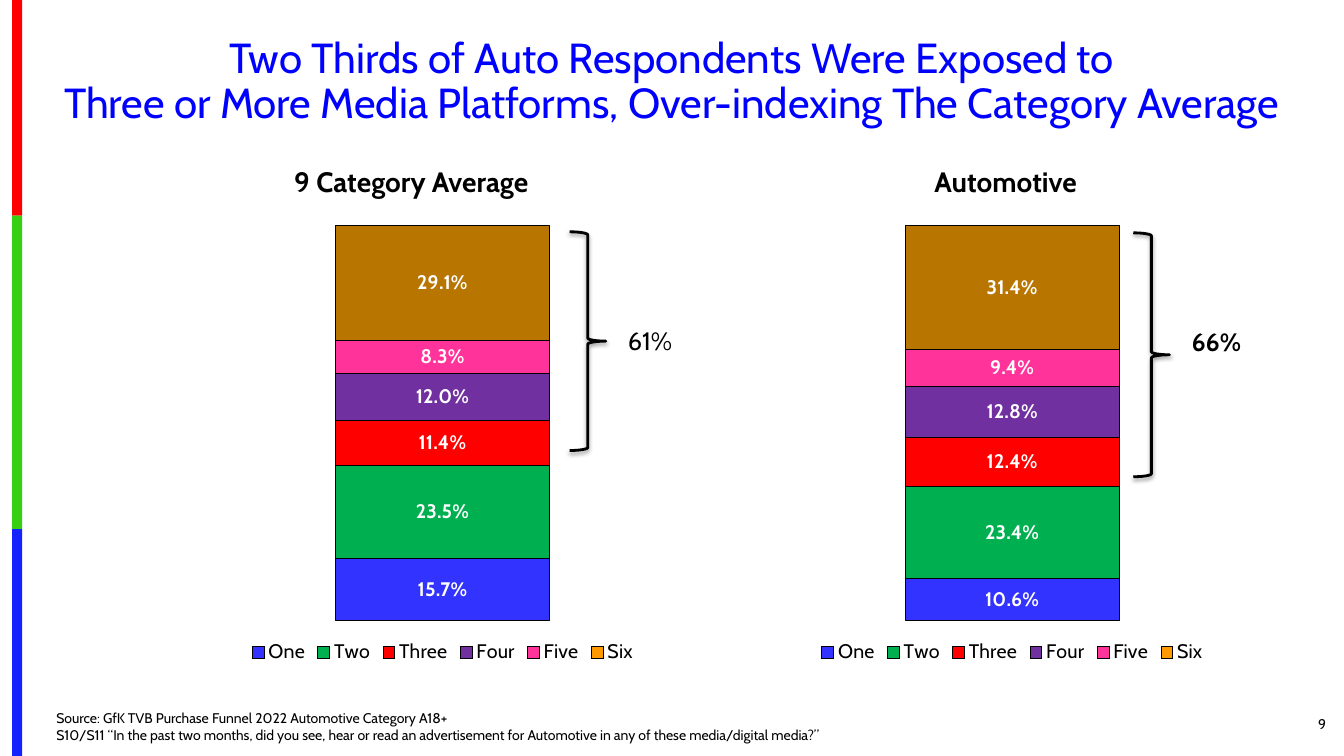
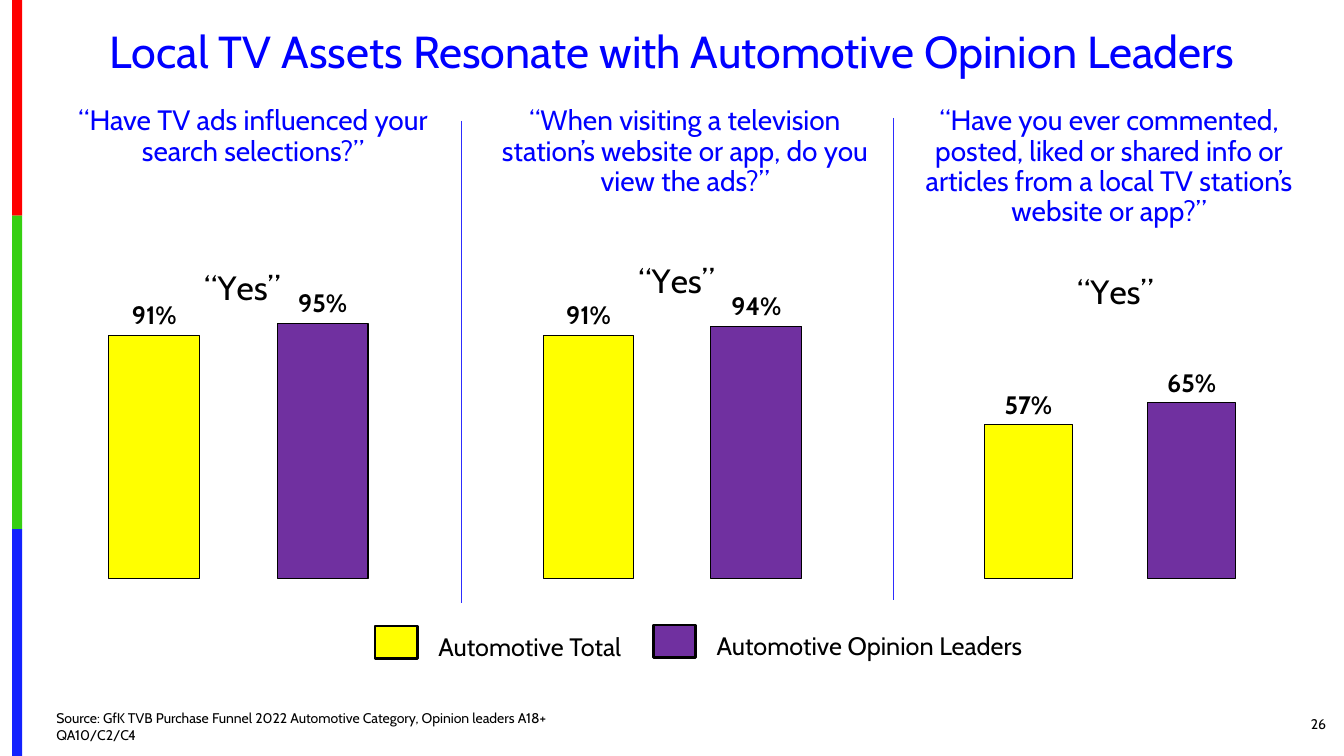
from pptx import Presentation
from pptx.chart.data import CategoryChartData
from pptx.dml.color import RGBColor
from pptx.enum.chart import XL_CHART_TYPE as ChartType, XL_LABEL_POSITION as LabelPosition, XL_LEGEND_POSITION as LegendPosition
from pptx.enum.shapes import MSO_CONNECTOR as Connector, MSO_SHAPE as Shape
from pptx.enum.text import MSO_ANCHOR as Anchor, PP_ALIGN as Align
from pptx.oxml import parse_xml
from pptx.oxml.ns import nsdecls, qn
from pptx.util import Inches, Pt

FONT = "Cabin"
BLACK, WHITE, BLUE = "000000", "FFFFFF", "0000FF"
YELLOW, PURPLE, DIVIDER = "FFFF00", "7030A0", "2D2DFE"
STRIPES = [("FE0000", 0, 2.14), ("36CF12", 2.14, 3.11), ("1322FE", 5.25, 2.25)]
hex_color = RGBColor.from_string


def add_text(slide, box, text, size, color=BLACK, bold=False, align=Align.LEFT, anchor=Anchor.TOP, spacing=1.0):
    frame = slide.shapes.add_textbox(*map(Inches, box)).text_frame
    frame.word_wrap = True
    frame.vertical_anchor = anchor
    paragraph = frame.paragraphs[0]
    paragraph.text = text
    paragraph.alignment = align
    paragraph.line_spacing = spacing
    paragraph.font.name = FONT
    paragraph.font.size = Pt(size)
    paragraph.font.bold = bold
    paragraph.font.color.rgb = hex_color(color)


def add_bar_chart(slide, kind, box, categories, series_rows, plot_box, gap, label_style, minimum):
    data = CategoryChartData()
    data.categories = categories
    for name, values, color, point_colors in series_rows:
        data.add_series(name, values)
    chart = slide.shapes.add_chart(kind, *map(Inches, box), data).chart
    chart.font.name = FONT
    chart.font.size = Pt(10)
    chart.font.color.rgb = hex_color(BLACK)
    chart.has_legend = False
    chart.has_title = False
    chart.category_axis.visible = False
    chart.value_axis.visible = False
    chart.value_axis.has_major_gridlines = False
    chart.value_axis.minimum_scale = minimum
    chart.value_axis.maximum_scale = 1
    plot = chart.plots[0]
    plot.gap_width = gap
    plot.vary_by_categories = False
    number_format, size, label_color, position = label_style
    for series, (name, values, color, point_colors) in zip(plot.series, series_rows):
        series.invert_if_negative = False
        targets = [(series.format, color)]
        targets += [(series.points[i].format, c) for i, c in enumerate(point_colors)]
        for target, fill in targets:
            target.fill.solid()
            target.fill.fore_color.rgb = hex_color(fill)
            target.line.color.rgb = hex_color(BLACK)
            target.line.width = Pt(0.75)
        labels = series.data_labels
        labels.show_value = True
        labels.number_format = number_format
        labels.number_format_is_linked = False
        labels.position = position
        labels.font.name = FONT
        labels.font.size = Pt(size)
        labels.font.bold = True
        labels.font.color.rgb = hex_color(label_color)
    plot_area = chart._chartSpace.chart.plotArea
    for layout in plot_area.findall(qn("c:layout")):
        plot_area.remove(layout)
    x, y, width, height = plot_box
    plot_area.insert(0, parse_xml(
        f'<c:layout {nsdecls("c")}><c:manualLayout><c:layoutTarget val="inner"/>'
        f'<c:xMode val="edge"/><c:yMode val="edge"/><c:x val="{x}"/><c:y val="{y}"/>'
        f'<c:w val="{width}"/><c:h val="{height}"/></c:manualLayout></c:layout>'))
    return chart


presentation = Presentation()
presentation.slide_width = Inches(13.33)
presentation.slide_height = Inches(7.5)

frames = [
    ("Two Thirds of Auto Respondents Were Exposed to\nThree or More Media Platforms, Over-indexing The Category Average",
     (0, 0.32, 13.33, 1.46), 30, "9",
     "Source: GfK TVB Purchase Funnel 2022 Automotive Category A18+\n"
     "S10/S11 “In the past two months, did you see, hear or read an advertisement for Automotive in any of these media/digital media?”"),
    ("Local TV Assets Resonate with Automotive Opinion Leaders",
     (0.46, 0.25, 12.42, 0.59), 32, "26",
     "Source: GfK TVB Purchase Funnel 2022 Automotive Category, Opinion leaders A18+\nQA10/C2/C4"),
]
slides = []
for title, title_box, title_size, number, source in frames:
    slide = presentation.slides.add_slide(presentation.slide_layouts[6])
    for color, top, height in STRIPES:
        stripe = slide.shapes.add_shape(Shape.RECTANGLE, Inches(0.12), Inches(top), Inches(0.1), Inches(height))
        stripe.shadow.inherit = False
        stripe.fill.solid()
        stripe.fill.fore_color.rgb = hex_color(color)
        stripe.line.fill.background()
    add_text(slide, title_box, title, title_size, BLUE, align=Align.CENTER, spacing=0.9)
    add_text(slide, (12.17, 6.98, 1.08, 0.4), number, 10, align=Align.RIGHT, anchor=Anchor.MIDDLE)
    add_text(slide, (0.46, 6.98, 9.45, 0.44), source, 10, anchor=Anchor.BOTTOM)
    slides.append(slide)
platforms_slide, leaders_slide = slides

platforms = [("One", "3333FF", []), ("Two", "00B050", []), ("Three", "FF0000", []),
             ("Four", PURPLE, []), ("Five", "FF3399", []), ("Six", "FF9900", ["B87600"])]
groups = [
    ("9 Category Average", (2.82, 1.58, 2.97, 0.44), 1.63, [0.157, 0.235, 0.114, 0.12, 0.083, 0.291],
     (5.65, 2.3, 0.36, 2.17), "61%", (6.13, 3.18, 0.9, 0.4), False),
    ("Automotive", (9.17, 1.58, 1.83, 0.44), 7.28, [0.106, 0.234, 0.124, 0.128, 0.094, 0.314],
     (11.24, 2.31, 0.36, 2.42), "66%", (11.72, 3.19, 0.9, 0.4), True),
]
for heading, heading_box, left, shares, brace_box, total, total_box, total_bold in groups:
    rows = [(name, [share], color, points) for (name, color, points), share in zip(platforms, shares)]
    chart = add_bar_chart(platforms_slide, ChartType.COLUMN_STACKED, (left, 1.34, 5.52, 5.29), ["1"], rows,
                          (0.02, 0.17, 0.96, 0.74), 150, ("0.0%", 14, WHITE, LabelPosition.CENTER), 0)
    chart.plots[0].overlap = 100
    chart.has_legend = True
    chart.legend.position = LegendPosition.BOTTOM
    chart.legend.include_in_layout = False
    chart.legend.font.name = FONT
    chart.legend.font.size = Pt(14)
    chart.legend.font.color.rgb = hex_color(BLACK)
    add_text(platforms_slide, heading_box, heading, 20, bold=True)
    brace = platforms_slide.shapes.add_shape(Shape.RIGHT_BRACE, *map(Inches, brace_box))
    brace.fill.background()
    brace.line.color.rgb = hex_color(BLACK)
    brace.line.width = Pt(2)
    brace._element.spPr.append(parse_xml(
        f'<a:effectLst {nsdecls("a")}><a:outerShdw blurRad="{Pt(3.1)}" dist="{Pt(1.6)}" dir="5400000" rotWithShape="0">'
        f'<a:srgbClr val="{BLACK}"><a:alpha val="38000"/></a:srgbClr></a:outerShdw></a:effectLst>'))
    add_text(platforms_slide, total_box, total, 18, bold=total_bold)

questions = [
    ("“Have TV ads influenced your search selections?”", (0.55, 1.01, 3.92, 0.71),
     (0.55, 2.38, 3.63, 3.57), [0.91, 0.95], 0.1, 0.05),
    ("“When visiting a television station’s website or app, do you view the ads?”", (4.73, 1.01, 4.13, 1.01),
     (4.86, 2.38, 3.62, 3.57), [0.91, 0.94], 0.1, 0.03),
    ("“Have you ever commented, posted, liked or shared info or articles from a local TV station’s website or app?”",
     (8.79, 1.01, 4.42, 1.31), (9.25, 2.38, 3.52, 3.57), [0.57, 0.65], 0, 0.06),
]
for question, question_box, chart_box, shares, minimum, title_top in questions:
    chart = add_bar_chart(leaders_slide, ChartType.COLUMN_CLUSTERED, chart_box, ["1", "2"],
                          [("Series 1", shares, "3333FF", [YELLOW, PURPLE])], (0.04, 0.19, 0.92, 0.75), 85,
                          ("0%", 18, BLACK, LabelPosition.OUTSIDE_END), minimum)
    chart.has_title = True
    paragraph = chart.chart_title.text_frame.paragraphs[0]
    paragraph.text = "“Yes”"
    paragraph.font.name = FONT
    paragraph.font.size = Pt(24)
    paragraph.font.bold = False
    paragraph.font.color.rgb = hex_color(BLACK)
    chart.chart_title._element.find(qn("c:layout")).append(parse_xml(
        f'<c:manualLayout {nsdecls("c")}><c:xMode val="edge"/><c:yMode val="edge"/>'
        f'<c:x val="0.39"/><c:y val="{title_top}"/></c:manualLayout>'))
    add_text(leaders_slide, question_box, question, 20, BLUE, align=Align.CENTER, spacing=0.9)

for label, color, left, top, label_width in [("Automotive Total", YELLOW, 3.72, 6.21, 2.07),
                                             ("Automotive Opinion Leaders", PURPLE, 6.48, 6.2, 3.34)]:
    swatch = leaders_slide.shapes.add_shape(Shape.RECTANGLE, Inches(left), Inches(top), Inches(0.42), Inches(0.32))
    swatch.shadow.inherit = False
    swatch.fill.solid()
    swatch.fill.fore_color.rgb = hex_color(color)
    swatch.line.color.rgb = hex_color(BLACK)
    swatch.line.width = Pt(2)
    add_text(leaders_slide, (left + 0.53, top, label_width, 0.4), label, 18)

for x, top in [(4.58, 1.2), (8.86, 1.17)]:
    divider = leaders_slide.shapes.add_connector(Connector.STRAIGHT, Inches(x), Inches(top), Inches(x), Inches(top + 4.78))
    divider.line.color.rgb = hex_color(DIVIDER)
    divider.line.width = Pt(0.75)
    divider._element.spPr.append(parse_xml(f'<a:effectLst {nsdecls("a")}/>'))

presentation.save("out.pptx")
